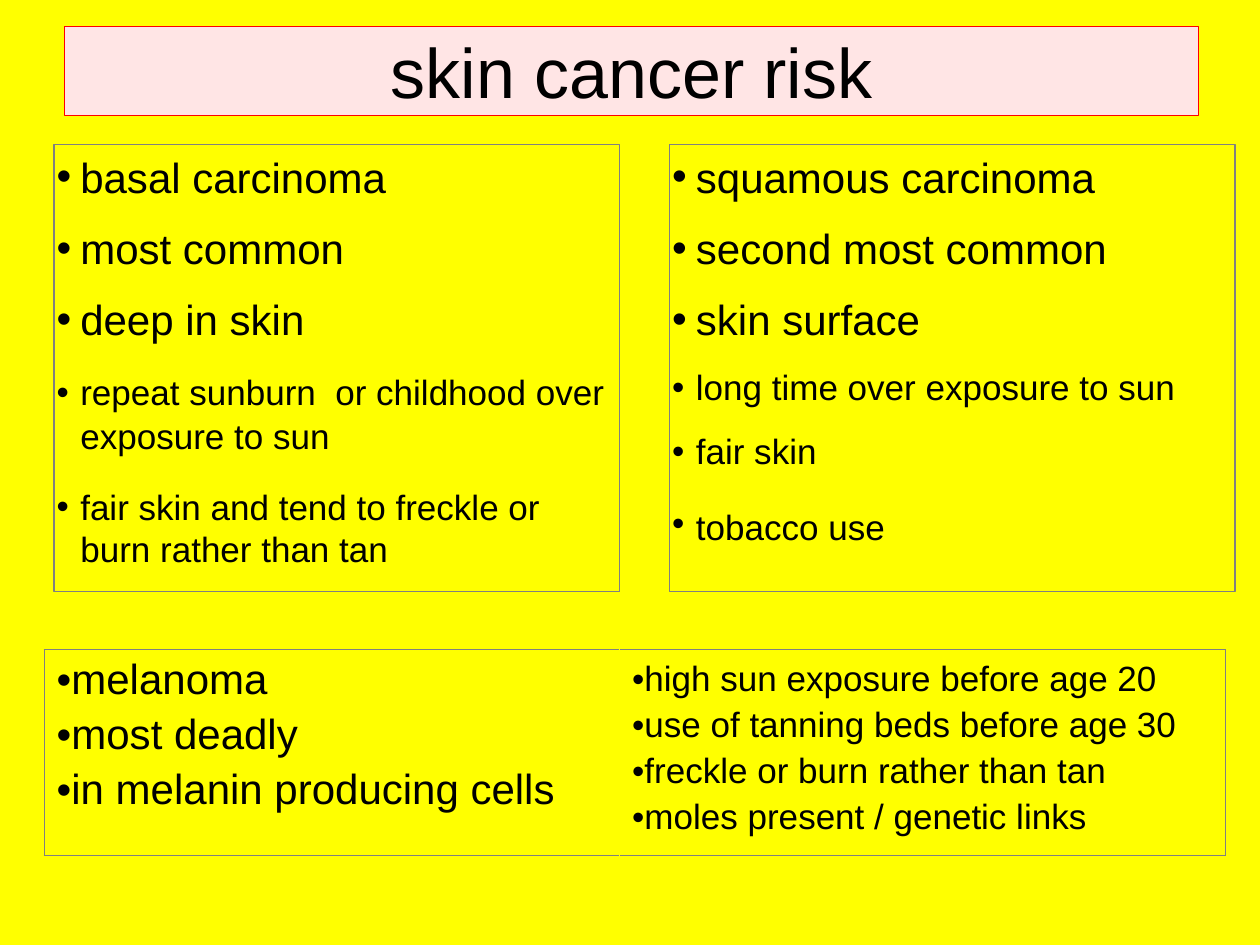
import pptx
import pptx.util
import pptx.dml.color
import pptx.enum.text
from lxml import etree
from pptx.oxml.ns import qn
from pptx.util import Cm, Pt

TITLE = "skin cancer risk"
BIG, SMALL = 24, 20

# Each line: text, size, space before in %, line spacing, size of a closing space
BASAL = [
    ("basal carcinoma", BIG, 75, None, None),
    ("most common", BIG, 50, None, None),
    ("deep in skin", BIG, 50, None, None),
    ("repeat sunburn  or childhood over exposure to sun", SMALL, 75, 0.9, BIG),
    ("fair skin and tend to freckle or burn rather than tan", SMALL, 75, None, None),
]
SQUAMOUS = [
    ("squamous carcinoma", BIG, 75, None, None),
    ("second most common", BIG, 50, None, None),
    ("skin surface", BIG, 50, None, None),
    ("long time over exposure to sun", SMALL, 75, 0.9, None),
    ("fair skin", SMALL, 75, 0.9, None),
    ("tobacco use", SMALL, 75, 0.9, BIG),
]
MELANOMA = [
    ("melanoma", BIG, 20, None, None),
    ("most deadly", BIG, 20, None, None),
    ("in melanin producing cells", BIG, 20, None, None),
]
CAUSES = [
    ("high sun exposure before age 20", SMALL, 40, 1.1, None),
    ("use of tanning beds before age 30", SMALL, 20, None, None),
    ("freckle or burn rather than tan", SMALL, 20, None, None),
    ("moles present / genetic links", SMALL, 20, None, None),
]
YELLOW, PINK, RED, GREY, BLACK = "FFFF00", "FFE5E5", "FF0000", "808080", "000000"


def paint(fill, color):
    fill.solid()
    fill.fore_color.rgb = pptx.dml.color.RGBColor.from_string(color)


def frame(shape, color):
    paint(shape.line.fill, color)
    shape.line.width = Pt(0.75)


def add_run(par, text, size):
    run = par.add_run()
    run.text = text
    run.font.name = "Arial"
    run.font.size = Pt(size)
    paint(run.font.fill, BLACK)


def write(body, lines, indent):
    """Fill a text frame with bulleted lines, hanging by indent."""
    for i, (text, size, before, spacing, tail) in enumerate(lines):
        par = body.add_paragraph() if i else body.paragraphs[0]
        if spacing:
            par.line_spacing = spacing
        props = par._p.get_or_add_pPr()
        props.set("marL", str(indent))
        props.set("indent", str(-indent))
        space = etree.SubElement(props, qn("a:spcBef"))
        etree.SubElement(space, qn("a:spcPct"), val=str(before * 1000))
        etree.SubElement(props, qn("a:buFont"), typeface="Arial")
        etree.SubElement(props, qn("a:buChar"), char="•")
        add_run(par, text, size)
        if tail:
            add_run(par, " ", tail)


def border(cell, colors):
    """Draw the left, right, top and bottom cell edges."""
    props = cell._tc.get_or_add_tcPr()
    for i, (side, color) in enumerate(zip("LRTB", colors)):
        line = etree.Element(qn("a:ln" + side), w=str(Pt(0.75)))
        fill = etree.SubElement(line, qn("a:solidFill"))
        etree.SubElement(fill, qn("a:srgbClr"), val=color)
        props.insert(i, line)


deck = pptx.Presentation()
deck.slide_width, deck.slide_height = Cm(25.4), Cm(19.05)
slide = deck.slides.add_slide(deck.slide_layouts[5])
paint(slide.background.fill, YELLOW)

title = slide.shapes.title
title.left, title.top, title.width, title.height = Cm(1.3), Cm(0.53), Cm(22.86), Cm(1.8)
paint(title.fill, PINK)
frame(title, RED)
head = title.text_frame
head.auto_size = pptx.enum.text.MSO_AUTO_SIZE.NONE
head.vertical_anchor = pptx.enum.text.MSO_ANCHOR.MIDDLE
head.paragraphs[0].alignment = pptx.enum.text.PP_ALIGN.CENTER
add_run(head.paragraphs[0], TITLE, 40)

for i, lines in enumerate((BASAL, SQUAMOUS)):
    box = slide.shapes.add_textbox(Cm(1.09 + i * 12.41), Cm(2.92), Cm(11.4), Cm(9))
    frame(box, GREY)
    body = box.text_frame
    body.word_wrap = True
    body.margin_left, body.margin_right = Cm(0.05), 0
    write(body, lines, Cm(0.48))

widths = (11.6, 12.21)
grid = slide.shapes.add_table(1, 2, Cm(0.89), Cm(13.1), Cm(sum(widths)), Cm(3.9)).table
grid.first_row = grid.horz_banding = False
edges = ((GREY, YELLOW, GREY, GREY), (YELLOW, GREY, GREY, GREY))
for i, lines in enumerate((MELANOMA, CAUSES)):
    grid.columns[i].width = Cm(widths[i])
    cell = grid.cell(0, i)
    cell.fill.background()
    border(cell, edges[i])
    write(cell.text_frame, lines, 0)

deck.save("out.pptx")
